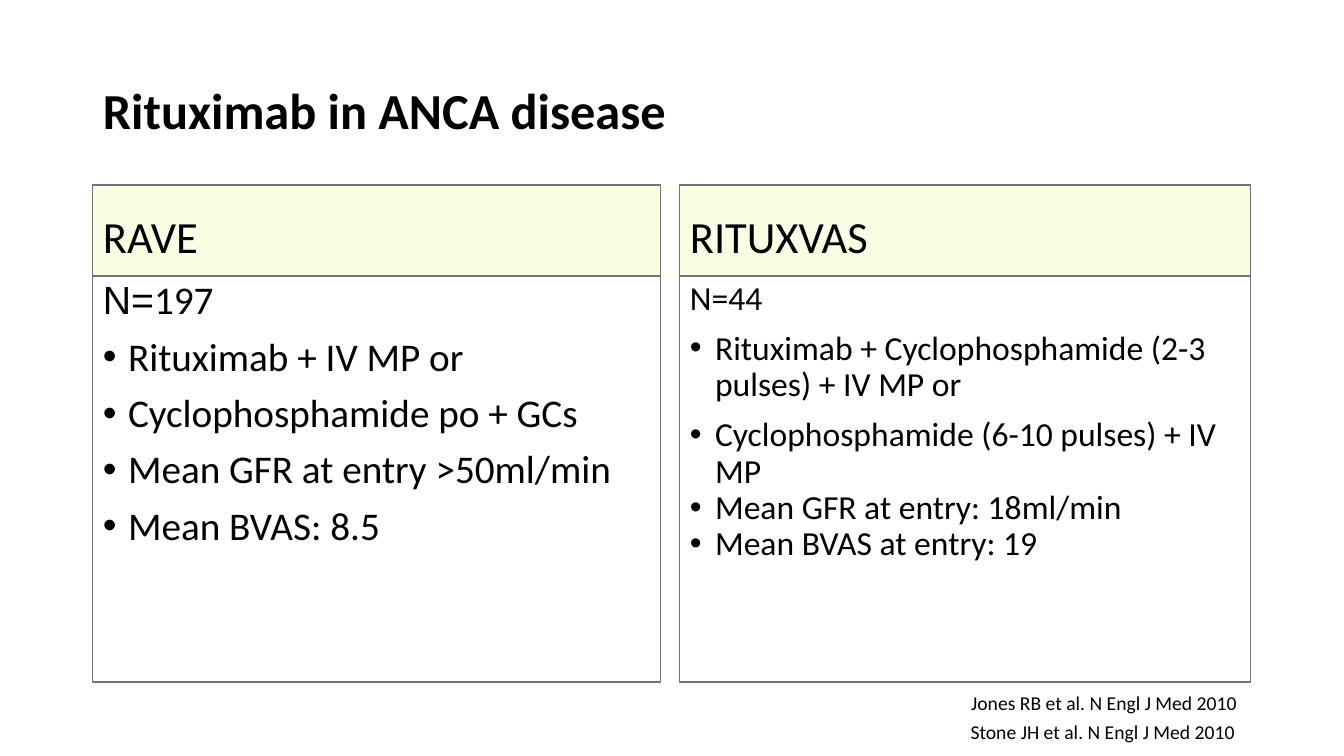
"""Build a slide comparing the two rituximab trials in ANCA disease."""
from lxml import etree
from pptx import Presentation
from pptx import util as u
from pptx.dml import color
from pptx.enum import shapes, text
from pptx.oxml import ns

EMU_PER_PX = 914400 / 100.8
BLACK, BORDER, HEADER_FILL = "000000", "767171", "F9FFE3"
HEADER_TOP, BODY_TOP, BODY_END = 185, 276, 682
TRIALS = [
    (93, 568, "RAVE", 28, [("N=", "Arial"), ("197", "Calibri")], [
        ("Rituximab + IV MP or", 10),
        ("Cyclophosphamide po + GCs", 10),
        ("Mean GFR at entry >50ml/min", 10),
        ("Mean BVAS: 8.5", 10),
    ]),
    (680, 571, "RITUXVAS", 24, [("N=44", "Calibri")], [
        ("Rituximab + Cyclophosphamide (2-3 pulses) + IV MP or", 10),
        ("Cyclophosphamide (6-10 pulses) + IV MP", 10),
        ("Mean GFR at entry: 18ml/min", 0),
        ("Mean BVAS at entry: 19", 0),
    ]),
]
CITATIONS = [
    (523, 682, 714, 41, "Jones RB et al. N Engl J Med 2010"),
    (523, 715, 712, 33, "Stone JH et al. N Engl J Med 2010"),
]


def px(length):
    """Turn pixels into EMU."""
    return u.Emu(round(length * EMU_PER_PX))


def rgb(value):
    """Turn a hex string into a colour."""
    return color.RGBColor.from_string(value)


def style(para, size, spacing, before=0, bold=False):
    """Set the font and spacing of a paragraph."""
    para.font.name, para.font.size, para.font.bold = "Calibri", u.Pt(size), bold
    para.font.color.rgb = rgb(BLACK)
    para.line_spacing, para.space_before = spacing, u.Pt(before)


def add_bullet(para):
    """Give a paragraph a hanging round bullet."""
    props = para._p.get_or_add_pPr()
    props.set("marL", "228600")
    props.set("indent", "-228600")
    etree.SubElement(props, ns.qn("a:buFont"), typeface="Arial")
    etree.SubElement(props, ns.qn("a:buChar"), char="•")


def add_panel(page, left, top, width, height, fill=None):
    """Draw a bordered rectangle and return its text frame."""
    panel = page.shapes.add_shape(
        shapes.MSO_SHAPE.RECTANGLE, px(left), px(top), px(width), px(height))
    panel.shadow.inherit = False
    if fill:
        panel.fill.solid()
        panel.fill.fore_color.rgb = rgb(fill)
    else:
        panel.fill.background()
    panel.line.color.rgb = rgb(BORDER)
    panel.line.width = u.Pt(0.75)
    frame = panel.text_frame
    frame.word_wrap = True
    frame.vertical_anchor = text.MSO_ANCHOR.TOP
    frame.paragraphs[0].alignment = text.PP_ALIGN.LEFT
    return frame


def add_label(page, left, top, width, height, words, size, spacing,
              align=text.PP_ALIGN.LEFT, bold=False):
    """Add a single line of text, centred vertically."""
    frame = page.shapes.add_textbox(
        px(left), px(top), px(width), px(height)).text_frame
    frame.word_wrap = True
    frame.vertical_anchor = text.MSO_ANCHOR.MIDDLE
    para = frame.paragraphs[0]
    para.text, para.alignment = words, align
    style(para, size, spacing, bold=bold)
    return frame


def add_trial(page, left, width, name, size, count, points):
    """Add a trial's header and its list of facts."""
    header = add_panel(page, left, HEADER_TOP, width, BODY_TOP - HEADER_TOP, HEADER_FILL)
    header.vertical_anchor = text.MSO_ANCHOR.BOTTOM
    header.margin_bottom = px(15)
    header.paragraphs[0].text = name
    style(header.paragraphs[0], 31.8, 0.7)

    body = add_panel(page, left, BODY_TOP, width, BODY_END - BODY_TOP)
    first = body.paragraphs[0]
    style(first, size, 0.9)
    for words, font in count:
        span = first.add_run()
        span.text, span.font.name = words, font
    for words, before in points:
        para = body.add_paragraph()
        para.text, para.alignment = words, text.PP_ALIGN.LEFT
        add_bullet(para)
        style(para, size, 0.9, before)


def main():
    """Build and save the slide."""
    deck = Presentation()
    deck.slide_width, deck.slide_height = px(1344), px(756)
    page = deck.slides.add_slide(deck.slide_layouts[6])
    add_label(page, 93, 40, 1159, 146, "Rituximab in ANCA disease", 36, 0.9, bold=True)
    for trial in TRIALS:
        add_trial(page, *trial)
    for left, top, width, height, words in CITATIONS:
        frame = add_label(page, left, top, width, height, words, 14, 1.01,
                          text.PP_ALIGN.RIGHT)
        frame.margin_left = frame.margin_right = 0
        frame.margin_top = frame.margin_bottom = 0
    deck.save("out.pptx")


if __name__ == "__main__":
    main()
